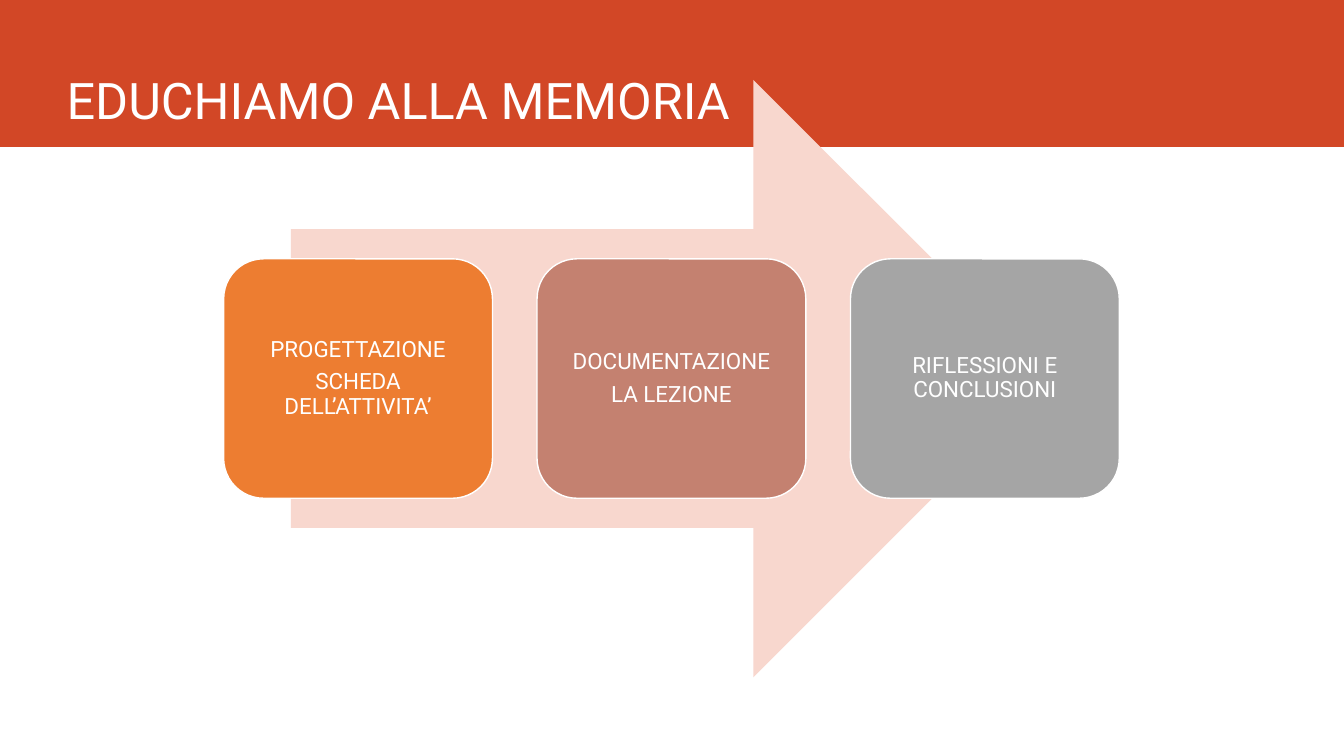
from dataclasses import dataclass

from pptx import Presentation
from pptx.dml.color import RGBColor
from pptx.enum.shapes import MSO_SHAPE
from pptx.enum.text import MSO_ANCHOR, PP_ALIGN
from pptx.util import Pt

RECT = MSO_SHAPE.RECTANGLE
ROUND = MSO_SHAPE.ROUNDED_RECTANGLE
ARROW = MSO_SHAPE.RIGHT_ARROW
MIDDLE = MSO_ANCHOR.MIDDLE
BOTTOM = MSO_ANCHOR.BOTTOM
CENTER = PP_ALIGN.CENTER
LEFT = PP_ALIGN.LEFT
SCALE = 9525


@dataclass(frozen=True)
class Theme:
    font: str = "Roboto"
    white: str = "FFFFFF"
    band: str = "D24726"
    arrow: str = "F8D7CE"
    title: int = 36
    body: int = 16


THEME = Theme()
STEPS = [
    ("ED7D31", ["PROGETTAZIONE", "SCHEDA DELL’ATTIVITA’"]),
    ("C48170", ["DOCUMENTAZIONE", "LA LEZIONE"]),
    ("A5A5A5", ["RIFLESSIONI E CONCLUSIONI"]),
]


def px(value):
    return round(value * SCALE)


def add_form(slide, kind, box, fill, line=None):
    shape = slide.shapes.add_shape(kind, *map(px, box))
    shape.shadow.inherit = False
    shape.fill.solid()
    shape.fill.fore_color.rgb = RGBColor.from_string(fill)
    if line:
        shape.line.color.rgb = RGBColor.from_string(line)
        shape.line.width = Pt(1)
    else:
        shape.line.fill.background()
    return shape


def write(frame, lines, size, align, anchor):
    frame.word_wrap = True
    frame.vertical_anchor = anchor
    for index, line in enumerate(lines):
        para = frame.add_paragraph() if index else frame.paragraphs[0]
        para.text = line
        para.alignment = align
        para.line_spacing = 0.9
        para.font.name = THEME.font
        para.font.size = Pt(size)
        para.font.color.rgb = RGBColor.from_string(THEME.white)


def draw_head(slide, box, text):
    left, top, width, height = box
    add_form(slide, RECT, box, THEME.band)
    place = (left + 54, top, width - 141, height - 11)
    title = slide.shapes.add_textbox(*map(px, place))
    write(title.text_frame, [text], THEME.title, LEFT, BOTTOM)


def draw_card(slide, box, fill, lines):
    frame = add_form(slide, ROUND, box, fill, THEME.white).text_frame
    frame.margin_left = frame.margin_right = px(7)
    frame.margin_top = frame.margin_bottom = px(7)
    write(frame, lines, THEME.body, CENTER, MIDDLE)
    for para in frame.paragraphs:
        para.space_after = Pt(6)


def draw_flow(slide, box, steps):
    left, top, width, height = box
    inset = 64
    add_form(slide, ARROW, (left + inset, top, width - 2 * inset, height),
             THEME.arrow)
    wide, high = 256, 228
    pitch = (width - wide) / (len(steps) - 1)
    for index, (fill, lines) in enumerate(steps):
        place = (left + index * pitch, top + (height - high) / 2, wide, high)
        draw_card(slide, place, fill, lines)


def main():
    deck = Presentation()
    deck.slide_width, deck.slide_height = px(1280), px(720)
    slide = deck.slides.add_slide(deck.slide_layouts[6])
    draw_head(slide, (0, 0, 1280, 140), "EDUCHIAMO ALLA MEMORIA")
    draw_flow(slide, (213, 76, 853, 569), STEPS)
    deck.save("out.pptx")


if __name__ == "__main__":
    main()
